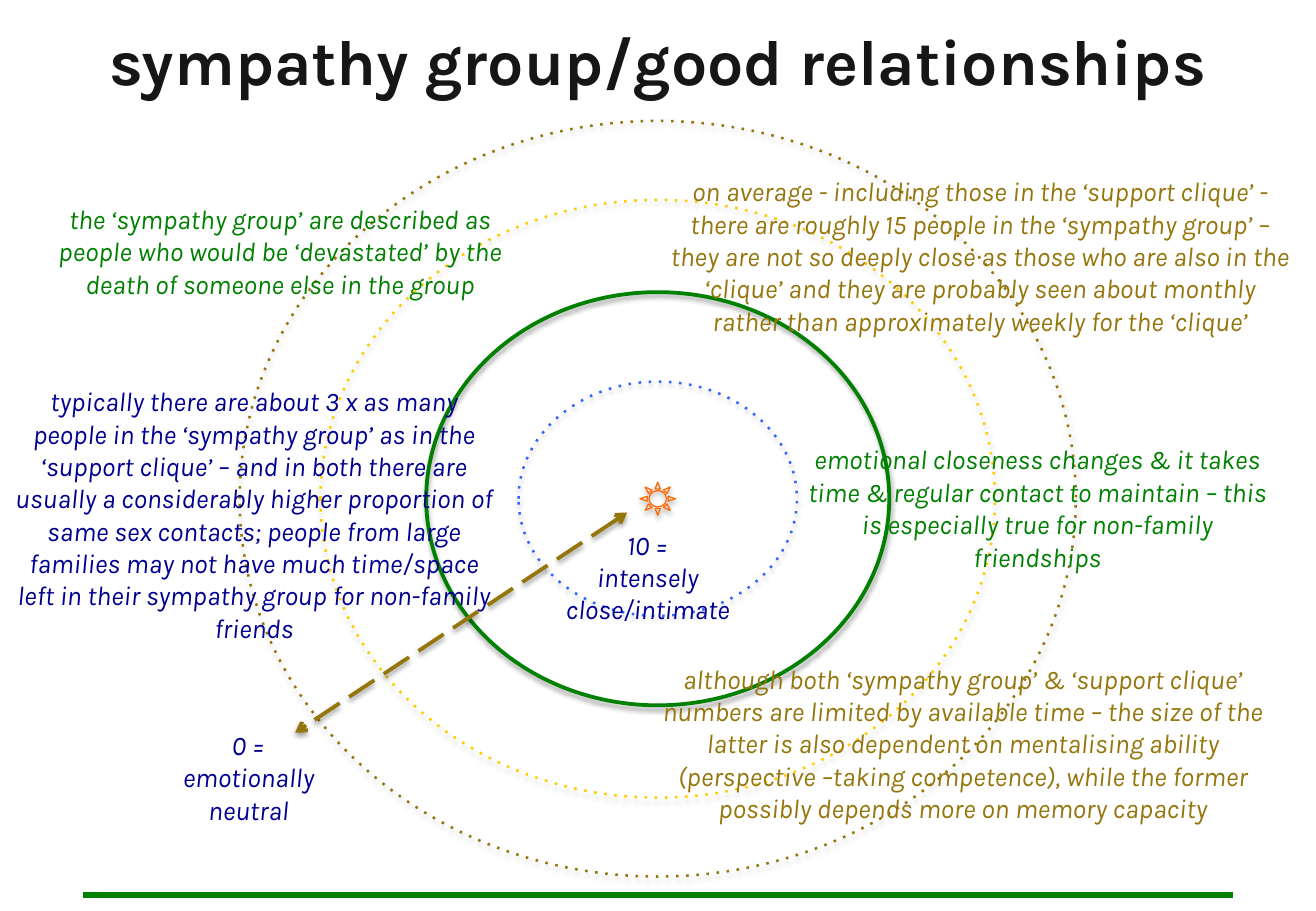
from lxml.etree import SubElement
from pptx import Presentation
from pptx.dml.color import RGBColor
from pptx.enum.shapes import MSO_CONNECTOR, MSO_SHAPE
from pptx.enum.text import MSO_ANCHOR, MSO_AUTO_SIZE, PP_ALIGN
from pptx.oxml.ns import qn
from pptx.util import Cm, Pt

GREEN, OCHRE, NAVY = "008000", "95760C", "000090"
CENTRE_X, CENTRE_Y = 13.75, 10.43

NOTE_FONT = {"name": "Karla", "size": Pt(16), "italic": True}
TITLE_FONT = {"name": "Karla", "size": Pt(38), "bold": True}

# width, height, colour, line width, dash
RINGS = [
    (17.48, 15.8, OCHRE, 1.5, "dot"),
    (5.82, 4.9, "3366FF", 1.5, "dot"),
    (9.68, 8.64, GREEN, 2.25, None),
    (14.1, 12.5, "FFCC00", 1.5, "dot"),
]

# left, top, width, height, colour, paragraphs
NOTES = [
    (0.76, 4.11, 10.19, 3.0, GREEN, [
        "the ‘sympathy group’ are described as people who would be ‘devastated’ "
        "by the death of someone else in the group"]),
    (13.77, 3.53, 13.44, 4.37, OCHRE, [
        "on average - including those in the ‘support clique’ - there are roughly "
        "15 people in the ‘sympathy group’ – they are not so deeply close as those "
        "who are also in the ‘clique’ and they are probably seen about monthly "
        "rather than approximately weekly for the ‘clique’"]),
    (2.92, 15.11, 4.55, 2.31, NAVY, ["0 =", "emotionally neutral"]),
    (10.72, 10.92, 5.64, 2.31, NAVY, ["10 =", "intensely close/intimate"]),
    (13.08, 13.72, 14.1, 4.37, OCHRE, [
        "although both ‘sympathy group’ & ‘support clique’ numbers are limited by "
        "available time – the size of the latter is also dependent on mentalising "
        "ability (perspective –taking competence), while the former possibly "
        "depends more on memory capacity"]),
    (0.05, 7.92, 10.52, 6.4, NAVY, [
        "typically there are about 3 x as many people in the ‘sympathy group’ as in "
        "the ‘support clique’ – and in both there are usually a considerably higher "
        "proportion of same sex contacts; people from large families may not have "
        "much time/space left in their sympathy group for non-family friends"]),
    (16.59, 9.14, 10.19, 3.0, GREEN, [
        "emotional closeness changes & it takes time & regular contact to maintain "
        "– this is especially true for non-family friendships"]),
]


def rgb(colour):
    return RGBColor.from_string(colour)


def style_text(para, colour, font_format):
    para.alignment = PP_ALIGN.CENTER
    for name, value in font_format.items():
        setattr(para.font, name, value)
    para.font.color.rgb = rgb(colour)


def style_line(shape, colour, width, dash=None, arrows=False):
    shape.line.color.rgb = rgb(colour)
    shape.line.width = Pt(width)
    outline = shape._element.spPr.find(qn("a:ln"))
    if dash:
        SubElement(outline, qn("a:prstDash"), val=dash)
    if arrows:
        for end in ("a:headEnd", "a:tailEnd"):
            SubElement(outline, qn(end), type="arrow")


def set_shadow(shape, opacity=0, distance=0):
    """Give a soft shadow straight below, or none when opacity is 0."""
    effects = SubElement(shape._element.spPr, qn("a:effectLst"))
    if opacity:
        shadow = SubElement(effects, qn("a:outerShdw"), blurRad=str(Pt(3.1)),
                            dist=str(Pt(distance)), dir="5400000", rotWithShape="0")
        black = SubElement(shadow, qn("a:srgbClr"), val="000000")
        SubElement(black, qn("a:alpha"), val=str(opacity * 1000))


def add_centred(group, preset, width, height, colour, line_width, dash=None):
    """Add an unfilled shape around the common centre."""
    shape = group.shapes.add_shape(
        preset, Cm(CENTRE_X - width / 2), Cm(CENTRE_Y - height / 2),
        Cm(width), Cm(height))
    shape.fill.background()
    style_line(shape, colour, line_width, dash)
    set_shadow(shape, 35, 1.8)


def add_straight(page, start, end, colour, width, **line_format):
    line = page.shapes.add_connector(
        MSO_CONNECTOR.STRAIGHT, *[Cm(length) for length in (*start, *end)])
    style_line(line, colour, width, **line_format)
    return line


def add_note(page, left, top, width, height, colour, paragraphs):
    box = page.shapes.add_textbox(Cm(left), Cm(top), Cm(width), Cm(height))
    frame = box.text_frame
    frame.word_wrap = True
    frame.auto_size = MSO_AUTO_SIZE.SHAPE_TO_FIT_TEXT
    frame.text = "\n".join(paragraphs)
    for para in frame.paragraphs:
        style_text(para, colour, NOTE_FONT)


def set_title(page, text):
    title = page.shapes.title
    title.left, title.top, title.width, title.height = Cm(0), Cm(0.53), Cm(27.51), Cm(1.65)
    title.text_frame.text = text
    title.text_frame.vertical_anchor = MSO_ANCHOR.BOTTOM
    style_text(title.text_frame.paragraphs[0], "161616", TITLE_FONT)


def main():
    deck = Presentation()
    deck.slide_width, deck.slide_height = Cm(27.51), Cm(19.05)
    page = deck.slides.add_slide(deck.slide_layouts[5])
    set_title(page, "sympathy group/good relationships")

    circles = page.shapes.add_group_shape()
    for ring in RINGS:
        add_centred(circles, MSO_SHAPE.OVAL, *ring)
    add_centred(circles, MSO_SHAPE.SUN, 0.74, 0.69, "FF6600", 0.75)

    rule = add_straight(page, (1.73, 18.72), (25.78, 18.72), GREEN, 3.25)
    set_shadow(rule)
    scale = add_straight(page, (13.11, 10.72), (6.17, 15.32), OCHRE, 2.25,
                         dash="lgDash", arrows=True)
    set_shadow(scale, 38, 1.6)

    for note in NOTES:
        add_note(page, *note)
    deck.save("out.pptx")


if __name__ == "__main__":
    main()
